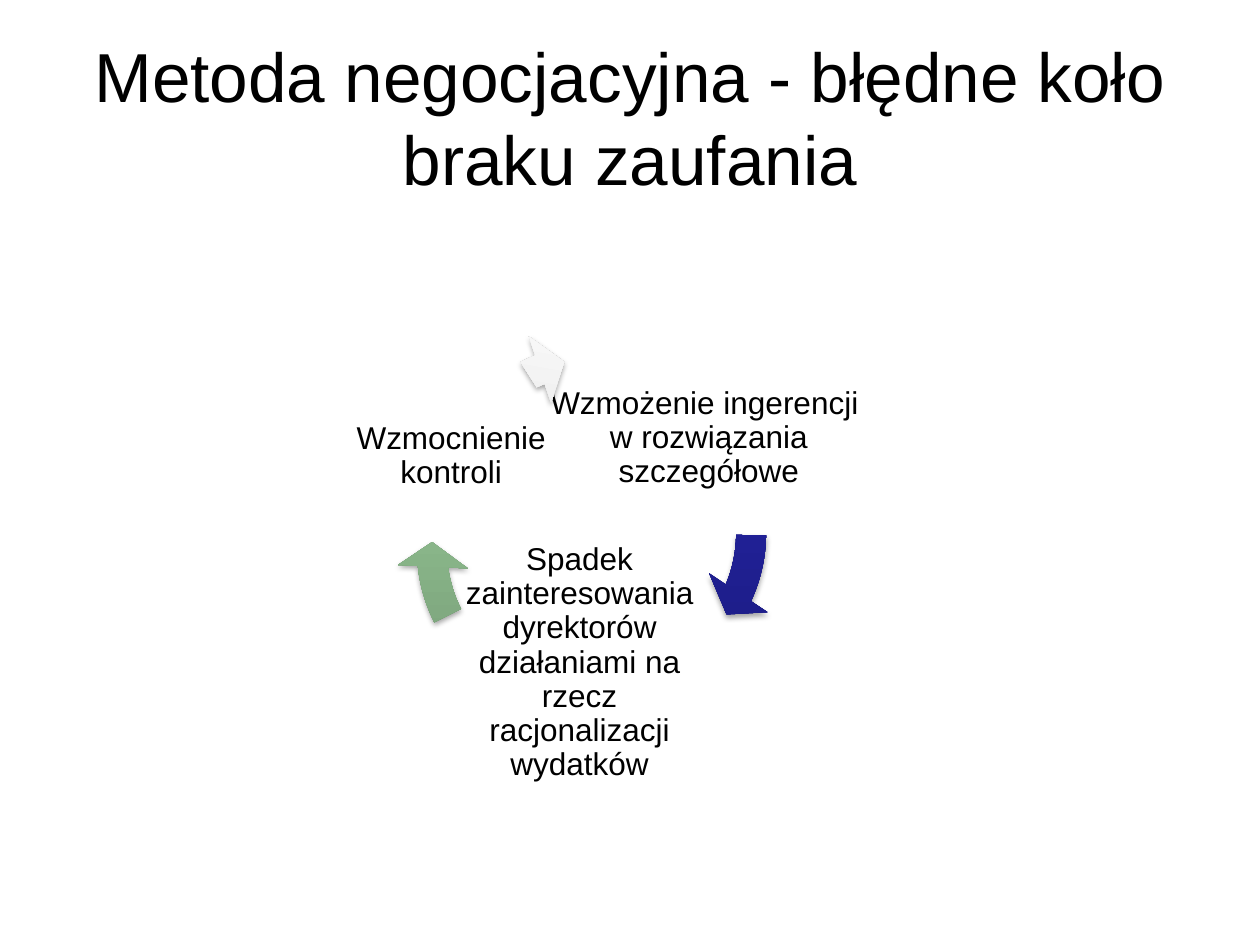
"""Build a slide showing the vicious circle of distrust as a three-step cycle."""
from copy import deepcopy

from lxml import etree
from pptx import Presentation
from pptx.dml.color import RGBColor
from pptx.enum import shapes, text
from pptx.oxml import ns
from pptx.util import Pt

COLORS = {
    "text": "000000",
    "shadow": "000000",
    "navy": ("1B1B7E", "2323A3", "2020A6"),
    "green": ("739873", "95C595", "95C795"),
    "grey": ("BEBEBE", "F7F7F7", "F8F8F8"),
}
STOPS = (0, 0.8, 1)
STEPS = [
    (("Wzmożenie ingerencji ", "w rozwiązania szczegółowe"),
     (308.88, 206.64, 192.24, 87.84),
     "navy", (240.48, 200.16, 208.8, 208.8), 0, (14.364, 0.517)),
    (("Spadek zainteresowania dyrektorów działaniami na rzecz racjonalizacji wydatków",),
     (259.92, 334.8, 142.56, 87.84),
     "green", (226.8, 209.52, 208.8, 208.8), 0, (103.921, 91.96)),
    (("Wzmocnienie kontroli",),
     (193.68, 223.2, 128.16, 74.88),
     "grey", (235.44, 184.32, 228.96, 208.8), 10.3, (138.971, 136.215)),
]


def add_text(paragraph, wording, size):
    run = paragraph.add_run()
    run.text = wording
    run.font.name = "Arial"
    run.font.size = Pt(size)
    run.font.color.rgb = RGBColor.from_string(COLORS["text"])


def add_shadow(shape):
    shape.shadow.inherit = False
    effects = shape._element.spPr.find(ns.qn("a:effectLst"))
    shadow = etree.SubElement(
        effects, ns.qn("a:outerShdw"), blurRad=str(Pt(3.1)), dist=str(Pt(1.8)),
        dir="5400000", rotWithShape="0")
    color = etree.SubElement(shadow, ns.qn("a:srgbClr"), val=COLORS["shadow"])
    etree.SubElement(color, ns.qn("a:alpha"), val="35000")


prs = Presentation()
prs.slide_width, prs.slide_height = Pt(720), Pt(540)
slide = prs.slides.add_slide(prs.slide_layouts[5])

title = slide.shapes.title
title.left, title.top, title.width, title.height = Pt(36), Pt(21.6), Pt(648), Pt(90)
title.text_frame.vertical_anchor = text.MSO_ANCHOR.MIDDLE
heading = title.text_frame.paragraphs[0]
heading.alignment = text.PP_ALIGN.CENTER
add_text(heading, "Metoda negocjacyjna - błędne koło braku zaufania", 39.6)

cycle = slide.shapes.add_group_shape()
for lines, label_box, color, arrow_box, rotation, (end, start) in STEPS:
    label = cycle.shapes.add_textbox(*map(Pt, label_box))
    frame = label.text_frame
    frame.word_wrap = True
    frame.vertical_anchor = text.MSO_ANCHOR.MIDDLE
    frame.margin_left = frame.margin_right = Pt(2)
    frame.margin_top = frame.margin_bottom = Pt(2)
    caption = frame.paragraphs[0]
    caption.alignment = text.PP_ALIGN.CENTER
    caption.line_spacing = 0.9
    caption.space_after = Pt(6.3)
    for index, line in enumerate(lines):
        if index:
            caption.add_line_break()
        add_text(caption, line, 18)

    arrow = cycle.shapes.add_shape(
        shapes.MSO_SHAPE.CIRCULAR_ARROW, *map(Pt, arrow_box))
    arrow.rotation = rotation
    for index, value in enumerate((0.082, 5.761, end, start, 0.096)):
        arrow.adjustments[index] = value
    arrow.fill.gradient()
    arrow.fill.gradient_angle = 90
    stop_list = arrow._element.spPr.find(ns.qn("a:gradFill")).find(ns.qn("a:gsLst"))
    stop_list.append(deepcopy(stop_list[0]))
    for stop, position, shade in zip(arrow.fill.gradient_stops, STOPS, COLORS[color]):
        stop.position = position
        stop.color.rgb = RGBColor.from_string(shade)
    arrow.line.fill.background()
    add_shadow(arrow)

prs.save("out.pptx")
